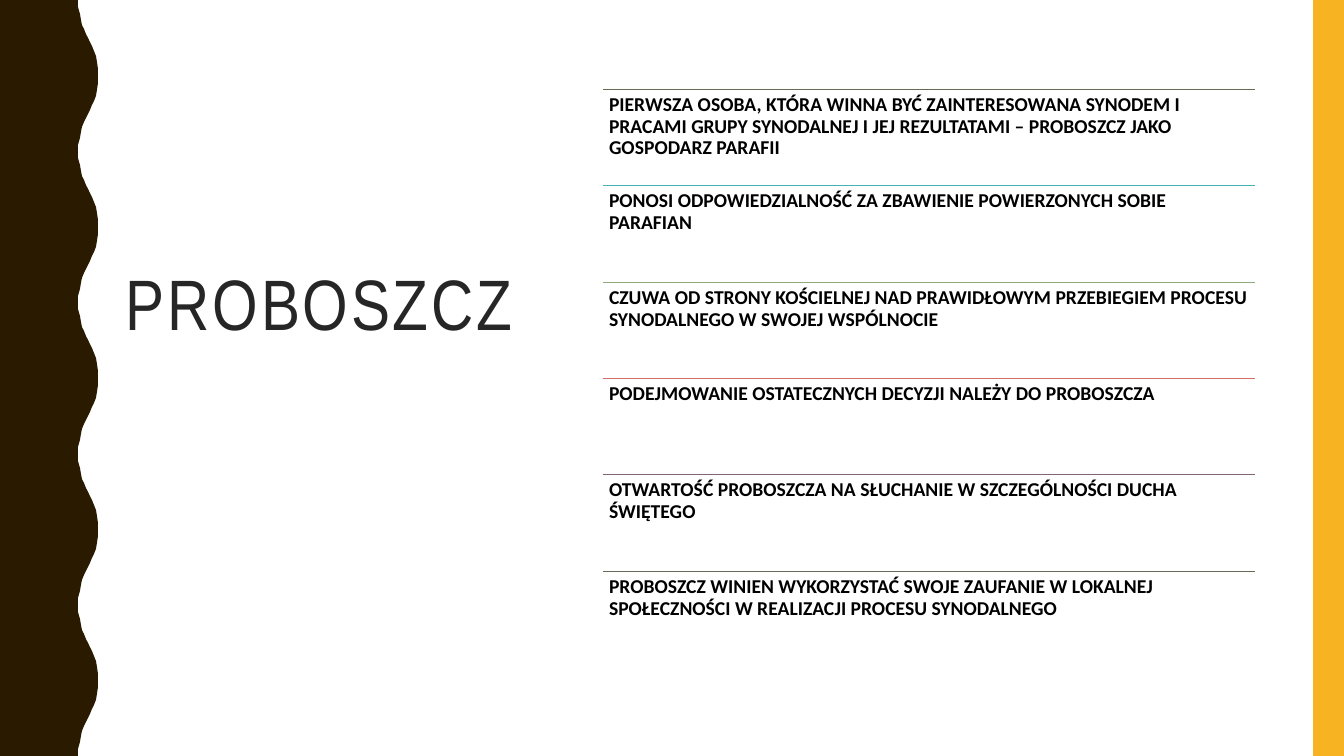
from dataclasses import dataclass

from lxml.etree import SubElement
from pptx import Presentation
from pptx.dml.color import RGBColor
from pptx.enum.shapes import MSO_CONNECTOR, MSO_SHAPE
from pptx.enum.text import MSO_ANCHOR, MSO_AUTO_SIZE, PP_ALIGN
from pptx.oxml.ns import qn
from pptx.shapes.base import BaseShape
from pptx.slide import Slide
from pptx.util import Emu, Pt

SLIDE_WIDTH, SLIDE_HEIGHT = 1344, 756
EMU_PER_PX = 12192000 / SLIDE_WIDTH

COLORS = {
    "wave": "2A1A00",
    "stripe": "F8B323",
    "title": "262626",
    "text": "000000",
    "olive": "656A59",
    "teal": "46B2B5",
    "green": "8CAA7E",
    "red": "D36F68",
    "plum": "826276",
}

# Wavy edge: one half wave from trough to crest, repeated and mirrored
HALF_WAVES = 10
WAVE_X = [78, 78, 80, 81, 82, 84, 86, 88, 90, 92, 94, 96, 97, 98, 98]
WAVE_Y = [0, 7, 14, 20, 25, 29, 34, 38, 42, 46, 51, 56, 62, 69, 76]

# List of statements
LIST_LEFT, LIST_TOP, LIST_WIDTH, LIST_HEIGHT = 603, 89, 652, 578
LIST_INSET = 6


@dataclass
class Statement:
    text: str
    rule_color: str


STATEMENTS = [
    Statement("PIERWSZA OSOBA, KTÓRA WINNA BYĆ ZAINTERESOWANA SYNODEM I PRACAMI GRUPY "
              "SYNODALNEJ I JEJ REZULTATAMI – PROBOSZCZ JAKO GOSPODARZ PARAFII", "olive"),
    Statement("PONOSI ODPOWIEDZIALNOŚĆ ZA ZBAWIENIE POWIERZONYCH SOBIE PARAFIAN", "teal"),
    Statement("CZUWA OD STRONY KOŚCIELNEJ NAD PRAWIDŁOWYM PRZEBIEGIEM PROCESU "
              "SYNODALNEGO W SWOJEJ WSPÓLNOCIE", "green"),
    Statement("PODEJMOWANIE OSTATECZNYCH DECYZJI NALEŻY DO PROBOSZCZA", "red"),
    Statement("OTWARTOŚĆ PROBOSZCZA NA SŁUCHANIE W SZCZEGÓLNOŚCI DUCHA ŚWIĘTEGO", "plum"),
    Statement("PROBOSZCZ WINIEN WYKORZYSTAĆ SWOJE ZAUFANIE W LOKALNEJ SPOŁECZNOŚCI "
              "W REALIZACJI PROCESU SYNODALNEGO", "olive"),
]


def px(length: int) -> Emu:
    return Emu(round(length * EMU_PER_PX))


def color(name: str) -> RGBColor:
    return RGBColor.from_string(COLORS[name])


def fill_plain(shape: BaseShape, color_name: str) -> None:
    shape.shadow.inherit = False
    shape.fill.solid()
    shape.fill.fore_color.rgb = color(color_name)
    shape.line.fill.background()


def add_wave(slide: Slide) -> None:
    points = []
    for half in range(HALF_WAVES):
        start = half * SLIDE_HEIGHT / HALF_WAVES
        edge = WAVE_X if half % 2 == 0 else WAVE_X[::-1]
        points += [(x, min(round(start + y), SLIDE_HEIGHT)) for x, y in zip(edge, WAVE_Y)]
    builder = slide.shapes.build_freeform(0, 0, scale=EMU_PER_PX)
    builder.add_line_segments(points + [(0, SLIDE_HEIGHT)], close=True)
    fill_plain(builder.convert_to_shape(), "wave")


def add_stripe(slide: Slide) -> None:
    stripe = slide.shapes.add_shape(
        MSO_SHAPE.RECTANGLE, px(1313), 0, px(31), px(SLIDE_HEIGHT))
    fill_plain(stripe, "stripe")


def set_title(slide: Slide, text: str) -> None:
    title = slide.shapes.title
    title.left, title.top, title.width, title.height = px(116), px(116), px(409), px(528)
    frame = title.text_frame
    frame.text = text
    frame.word_wrap = True
    frame.auto_size = MSO_AUTO_SIZE.NONE
    frame.vertical_anchor = MSO_ANCHOR.TOP
    frame.margin_left, frame.margin_right, frame.margin_top = px(10), 0, px(153)
    paragraph = frame.paragraphs[0]
    paragraph.alignment = PP_ALIGN.LEFT
    paragraph.line_spacing = 0.9
    paragraph.font.name = "Arial Narrow"
    paragraph.font.size = Pt(51)
    paragraph.font.color.rgb = color("title")
    paragraph.runs[0]._r.get_or_add_rPr().set("spc", "200")


def add_statement(slide: Slide, statement: Statement, top: int, height: int) -> None:
    # Rule above the text
    rule = slide.shapes.add_connector(
        MSO_CONNECTOR.STRAIGHT, px(LIST_LEFT), px(top), px(LIST_LEFT + LIST_WIDTH), px(top))
    rule.line.color.rgb = color(statement.rule_color)
    rule.line.width = Pt(0.5)
    SubElement(rule._element.spPr, qn("a:effectLst"))

    # Text
    box = slide.shapes.add_textbox(px(LIST_LEFT), px(top), px(LIST_WIDTH), px(height))
    frame = box.text_frame
    frame.word_wrap = True
    frame.margin_left = frame.margin_right = px(LIST_INSET)
    frame.margin_top = frame.margin_bottom = px(LIST_INSET)
    frame.text = statement.text
    paragraph = frame.paragraphs[0]
    paragraph.line_spacing = 0.9
    paragraph.font.name = "Calibri"
    paragraph.font.size = Pt(14)
    paragraph.font.bold = True
    paragraph.font.color.rgb = color("text")


def main() -> None:
    presentation = Presentation()
    presentation.slide_width = px(SLIDE_WIDTH)
    presentation.slide_height = px(SLIDE_HEIGHT)
    slide = presentation.slides.add_slide(presentation.slide_layouts.get_by_name("Title Only"))

    add_wave(slide)
    add_stripe(slide)
    set_title(slide, "PROBOSZCZ")
    row_height = LIST_HEIGHT / len(STATEMENTS)
    for index, statement in enumerate(STATEMENTS):
        add_statement(slide, statement, LIST_TOP + round(index * row_height), round(row_height))

    presentation.save("out.pptx")


if __name__ == "__main__":
    main()
